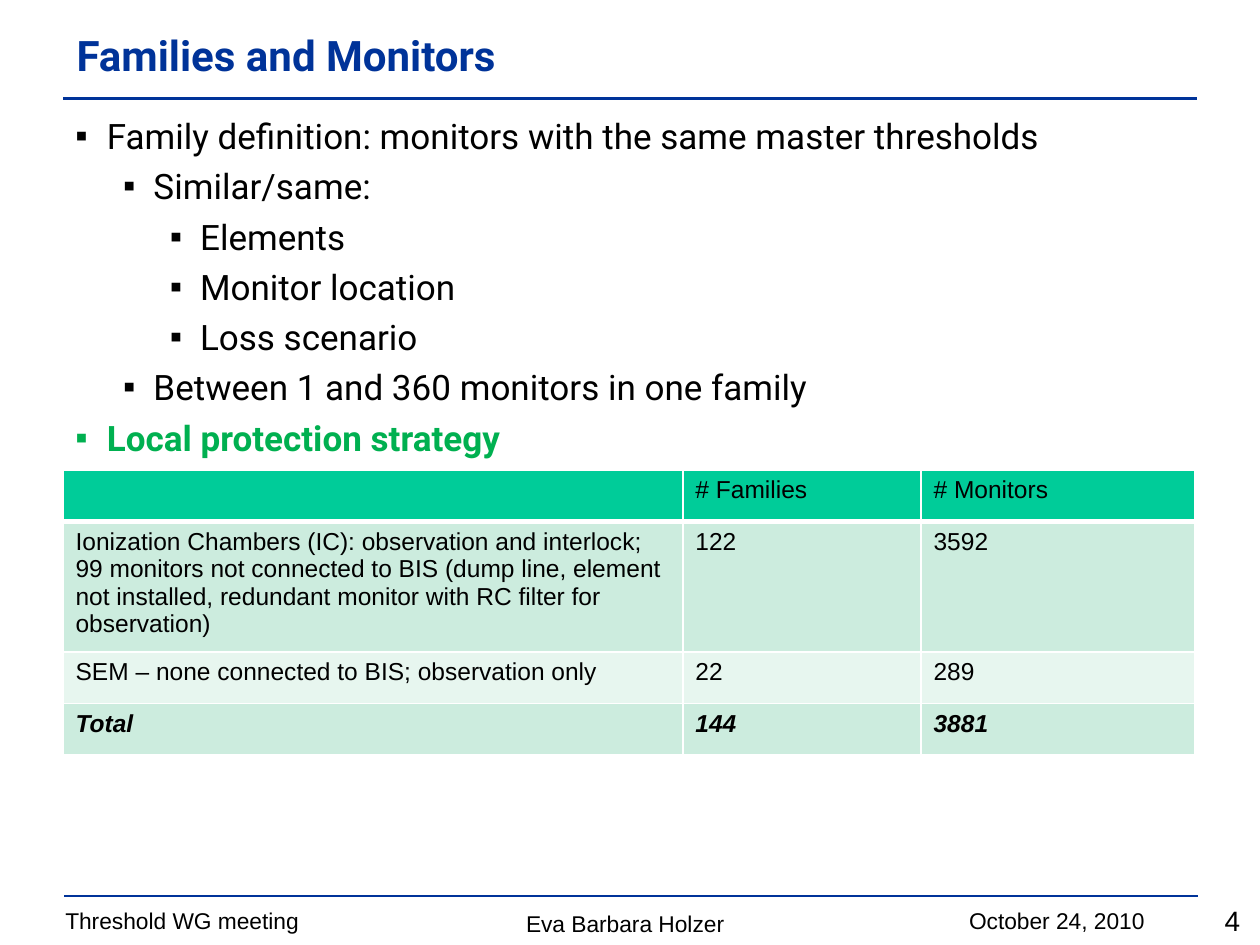
"""Builds the slide on monitor families and their counts."""
import dataclasses

import lxml.etree
import pptx
import pptx.dml.color
import pptx.enum.shapes
import pptx.enum.text
import pptx.oxml.ns
import pptx.util

Inches = pptx.util.Inches
Pt = pptx.util.Pt
ALIGN = pptx.enum.text.PP_ALIGN
ANCHOR = pptx.enum.text.MSO_ANCHOR


@dataclasses.dataclass(frozen=True)
class Theme:
    navy: str = "003399"
    black: str = "000000"
    green: str = "00B050"
    white: str = "FFFFFF"
    header: str = "00CC99"
    bands: tuple = ("CCECDE", "E7F6EF")
    heading_font: str = "Roboto"
    table_font: str = "Arial"
    title_size: int = 24
    body_size: int = 20
    number_size: int = 16
    table_size: int = 14
    footer_size: int = 13


def rgb(value):
    return pptx.dml.color.RGBColor.from_string(value)


def add_xml(parent, tag, **attributes):
    return lxml.etree.SubElement(parent, pptx.oxml.ns.qn(tag), attributes)


def apply_format(target, values):
    for name, value in values.items():
        setattr(target, name, value)


class SlideBuilder:
    def __init__(self, slide, theme):
        self.slide = slide
        self.theme = theme

    def add_text(self, paragraph, text, size, color, **font_format):
        run = paragraph.add_run()
        run.text = text
        apply_format(run.font, {"size": Pt(size), **font_format})
        run.font.color.rgb = rgb(color)

    def frame(self, box, anchor=ANCHOR.TOP):
        text_frame = self.slide.shapes.add_textbox(*map(Inches, box)).text_frame
        apply_format(text_frame, {"word_wrap": True, "vertical_anchor": anchor})
        return text_frame

    def label(self, text, box, size, color, align=ALIGN.LEFT, anchor=ANCHOR.TOP, **font_format):
        paragraph = self.frame(box, anchor).paragraphs[0]
        paragraph.alignment = align
        self.add_text(paragraph, text, size, color, **font_format)

    def rule(self, left, top, width):
        line = self.slide.shapes.add_connector(
            pptx.enum.shapes.MSO_CONNECTOR.STRAIGHT,
            Inches(left), Inches(top), Inches(left + width), Inches(top))
        line.line.color.rgb = rgb(self.theme.navy)
        line.line.width = Pt(1.5)
        add_xml(line._element.spPr, "a:effectLst")

    def bullets(self, items, box, indents):
        text_frame = self.frame(box)
        for index, (level, text, color, bold) in enumerate(items):
            paragraph = text_frame.add_paragraph() if index else text_frame.paragraphs[0]
            apply_format(paragraph, {"level": level, "space_before": Pt(4.7)})
            margin, hanging = indents[level]
            properties = paragraph._p.get_or_add_pPr()
            properties.set("marL", str(Inches(margin)))
            properties.set("indent", str(-Inches(hanging)))
            add_xml(add_xml(properties, "a:buClr"), "a:srgbClr", val=color)
            add_xml(properties, "a:buFont", typeface="Arial")
            add_xml(properties, "a:buChar", char="▪")
            self.add_text(paragraph, text, self.theme.body_size, color,
                          name=self.theme.heading_font, bold=bold)

    def borders(self, cell, widths):
        properties = cell._tc.get_or_add_tcPr()
        for side, width in widths.items():
            line = add_xml(properties, f"a:ln{side}", w=str(Pt(width)))
            add_xml(add_xml(line, "a:solidFill"), "a:srgbClr", val=self.theme.white)

    def table(self, rows, left, top, column_widths, row_heights):
        table = self.slide.shapes.add_table(
            len(rows), len(column_widths), Inches(left), Inches(top),
            Inches(sum(column_widths)), Inches(sum(row_heights))).table
        for column, width in zip(table.columns, column_widths):
            column.width = Inches(width)
        for row, height in zip(table.rows, row_heights):
            row.height = Inches(height)
        last = len(rows) - 1
        for r, row in enumerate(rows):
            fill = self.theme.bands[(r - 1) % 2] if r else self.theme.header
            for c, text in enumerate(row):
                cell = table.cell(r, c)
                self.borders(cell, {"L": 1, "R": 1, "T": 3 if r == 1 else 1,
                                    "B": 1 if r else 3})
                cell.fill.solid()
                cell.fill.fore_color.rgb = rgb(fill)
                if text:
                    self.add_text(cell.text_frame.paragraphs[0], text,
                                  self.theme.table_size, self.theme.black,
                                  name=self.theme.table_font, bold=r == last, italic=r == last)


def main():
    theme = Theme()
    deck = pptx.Presentation()
    apply_format(deck, {"slide_width": Inches(10), "slide_height": Inches(7.5)})
    page = SlideBuilder(deck.slides.add_slide(deck.slide_layouts[6]), theme)

    footers = [
        ("Eva Barbara Holzer", (2.42, 7.17, 5.08, 0.32), theme.footer_size, ALIGN.CENTER),
        ("Threshold WG meeting", (0.42, 7.15, 3.7, 0.32), theme.footer_size, ALIGN.LEFT),
        ("October 24, 2010", (6.26, 7.15, 2.92, 0.32), theme.footer_size, ALIGN.RIGHT),
        ("4", (8.79, 7.12, 1.15, 0.37), theme.number_size, ALIGN.RIGHT),
    ]
    for text, box, size, align in footers:
        page.label(text, box, size, theme.black, align, name=theme.table_font)
    page.rule(0.51, 7.11, 9)
    page.rule(0.5, 0.78, 9)

    definition = [
        (0, "Family definition: monitors with the same master thresholds"),
        (1, "Similar/same:"),
        (2, "Elements"),
        (2, "Monitor location"),
        (2, "Loss scenario"),
        (1, "Between 1 and 360 monitors in one family"),
    ]
    points = [(level, text, theme.black, False) for level, text in definition]
    points.append((0, "Local protection strategy", theme.green, True))
    page.bullets(points, (0.5, 0.86, 9, 6.16), [(0.25, 0.25), (0.62, 0.24), (0.99, 0.24)])

    page.label("Families and Monitors", (0.51, 0.09, 8.99, 0.68), theme.title_size,
               theme.navy, anchor=ANCHOR.MIDDLE, name=theme.heading_font, bold=True)

    monitor_counts = [
        ("", "# Families", "# Monitors"),
        ("Ionization Chambers (IC): observation and interlock; 99 monitors not connected "
         "to BIS (dump line, element not installed, redundant monitor with RC filter for "
         "observation)", "122", "3592"),
        ("SEM – none connected to BIS; observation only", "22", "289"),
        ("Total", "144", "3881"),
    ]
    page.table(monitor_counts, 0.5, 3.73, (4.92, 1.89, 2.17), (0.41, 0.97, 0.41, 0.41))
    deck.save("out.pptx")


if __name__ == "__main__":
    main()
